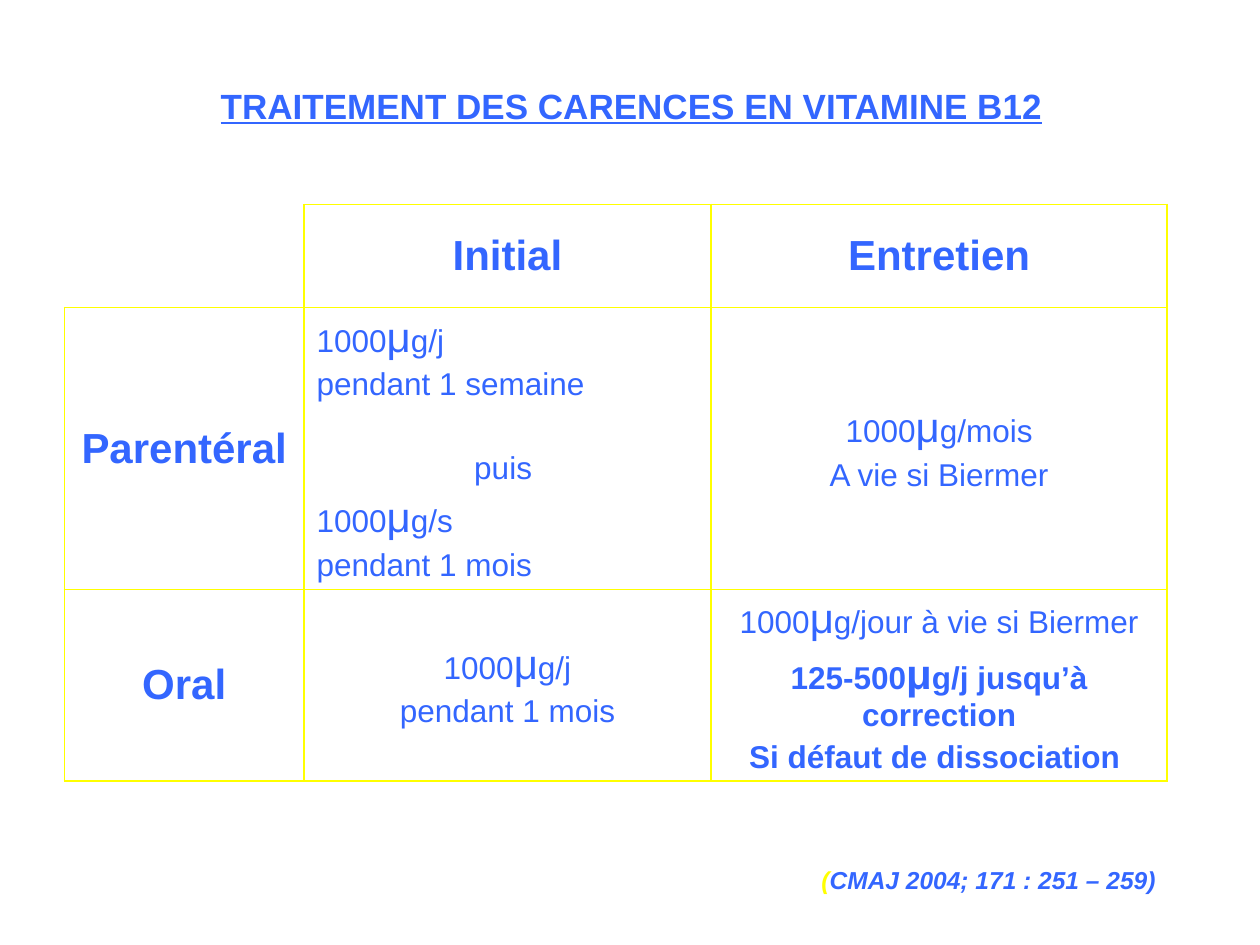
import dataclasses

import lxml.etree
import pptx
import pptx.dml.color
import pptx.enum.text
import pptx.oxml.ns
import pptx.util

Cm = pptx.util.Cm
Pt = pptx.util.Pt
RGB = pptx.dml.color.RGBColor
ALIGN = pptx.enum.text.PP_ALIGN
MIDDLE = pptx.enum.text.MSO_ANCHOR.MIDDLE


@dataclasses.dataclass(frozen=True)
class Theme:
    """Hold the colours, font and type sizes."""
    font: str = "Arial"
    ink: str = "3366FF"
    line: str = "FFFF00"
    title: int = 20
    head: int = 24
    body: int = 18
    note: int = 14


@dataclasses.dataclass(frozen=True)
class Para:
    """Hold one paragraph of a cell."""
    text: str
    size: int
    bold: bool = False
    align: int = ALIGN.CENTER
    gap: float = 0


THEME = Theme()


def head(text):
    """Return the content of a heading cell."""
    return [Para(text, THEME.head, True)]


def dose(text, **style):
    """Return one body line of a dose cell."""
    return Para(text, THEME.body, **style)


ROWS = [
    [[], head("Initial"), head("Entretien")],
    [
        head("Parentéral"),
        [
            dose("1000μg/j", align=ALIGN.LEFT),
            dose("pendant 1 semaine", align=ALIGN.LEFT),
            dose("puis ", gap=24.3),
            dose("1000μg/s", align=ALIGN.LEFT),
            dose("pendant 1 mois", align=ALIGN.LEFT),
        ],
        [dose("1000μg/mois"), dose("A vie si Biermer")],
    ],
    [
        head("Oral"),
        [dose("1000μg/j"), dose("pendant 1 mois")],
        [
            dose("1000μg/jour à vie si Biermer"),
            dose("125-500μg/j jusqu’à correction", bold=True),
            dose("Si défaut de dissociation ", bold=True),
        ],
    ],
]


def style(run, size, bold=False, color=THEME.ink):
    """Format one run."""
    font = run.font
    font.name = THEME.font
    font.size = Pt(size)
    font.bold = bold
    font.color.rgb = RGB.from_string(color)


def add_title(slide, left, top, width, height):
    """Place the title in its box."""
    title = slide.shapes.title
    title.left, title.top, title.width, title.height = left, top, width, height
    frame = title.text_frame
    frame.text = "TRAITEMENT DES CARENCES EN VITAMINE B12"
    frame.vertical_anchor = MIDDLE
    para = frame.paragraphs[0]
    para.alignment = ALIGN.CENTER
    style(para.runs[0], THEME.title, True)
    para.runs[0].font.underline = True


def set_edges(cell, shown):
    """Draw the shown sides of a cell and clear the others."""
    props = cell._tc.get_or_add_tcPr()
    name = pptx.oxml.ns.qn
    for side in "LRTB":
        edge = lxml.etree.SubElement(props, name(f"a:ln{side}"), w=str(Pt(1)))
        if side in shown:
            fill = lxml.etree.SubElement(edge, name("a:solidFill"))
            lxml.etree.SubElement(fill, name("a:srgbClr"), val=THEME.line)
        else:
            lxml.etree.SubElement(edge, name("a:noFill"))


def fill_cell(cell, paras):
    """Write the paragraphs of a cell, with a larger mu sign."""
    frame = cell.text_frame
    cell.vertical_anchor = MIDDLE
    for i, item in enumerate(paras):
        para = frame.add_paragraph() if i else frame.paragraphs[0]
        para.alignment = item.align
        before, sign, after = item.text.partition("μ")
        top = THEME.head if sign else item.size
        para.space_before = Pt(0.2 * top + item.gap)
        for text in filter(None, (before, sign, after)):
            run = para.add_run()
            run.text = text
            style(run, THEME.head if text == "μ" else item.size, item.bold)


def add_grid(slide, left, top, width, height):
    """Place the treatment table in its box."""
    shape = slide.shapes.add_table(3, 3, left, top, width, height)
    table = shape.table
    table.first_row = table.horz_banding = False
    for col, part in zip(table.columns, (1.9, 3.23, 3.62)):
        col.width = int(width * part / 8.75)
    for row, part in zip(table.rows, (0.82, 2.23, 1.52)):
        row.height = int(height * part / 4.57)
    for r, row in enumerate(ROWS):
        for c, paras in enumerate(row):
            cell = table.cell(r, c)
            set_edges(cell, "LRTB" if paras else "RB")
            cell.fill.background()
            fill_cell(cell, paras)


def add_source(slide, left, top, width, height):
    """Place the reference in its box."""
    frame = slide.shapes.add_textbox(left, top, width, height).text_frame
    frame.word_wrap = False
    para = frame.paragraphs[0]
    parts = (("(", THEME.line), ("CMAJ 2004; 171 : 251 – 259)", THEME.ink))
    for text, color in parts:
        run = para.add_run()
        run.text = text
        style(run, THEME.note, True, color)
        run.font.italic = True


def main():
    """Build and save the slide."""
    deck = pptx.Presentation()
    deck.slide_width, deck.slide_height = Cm(25.4), Cm(19.05)
    slide = deck.slides.add_slide(deck.slide_layouts[5])
    add_title(slide, Cm(1.3), Cm(0.53), Cm(22.86), Cm(3.18))
    add_grid(slide, Cm(1.3), Cm(4.12), Cm(22.23), Cm(11.61))
    add_source(slide, Cm(16.31), Cm(17.32), Cm(7.59), Cm(0.84))
    deck.save("out.pptx")


if __name__ == "__main__":
    main()
